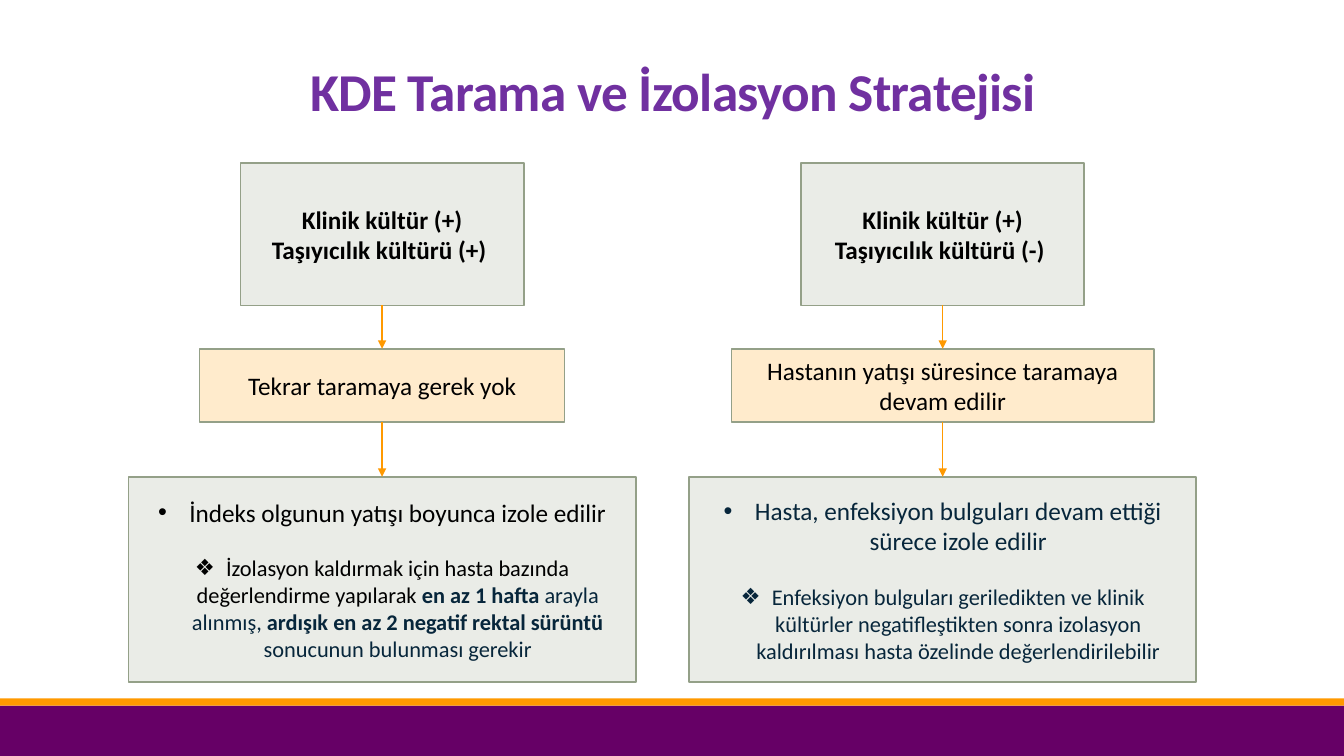
from dataclasses import dataclass

from lxml import etree
from pptx import Presentation
from pptx.dml.color import RGBColor
from pptx.enum import shapes, text
from pptx.oxml import ns
from pptx.util import Inches, Pt


@dataclass(frozen=True)
class Theme:
    font: str = "Calibri"
    purple: str = "660066"
    orange: str = "FF9900"
    title: str = "7030A0"
    sage: str = "EAECE7"
    peach: str = "FFEBCC"
    edge: str = "94A088"
    black: str = "000000"
    navy: str = "07263B"
    head: float = 38
    body: float = 18
    small: float = 16


T = Theme()


def rgb(code):
    return RGBColor.from_string(code)


def style(run, size, color, bold=False):
    font = run.font
    font.name, font.size, font.bold = T.font, Pt(size), bold
    font.color.rgb = rgb(color)


def add_rect(slide, left, top, width, height, fill, edge=None):
    rect = slide.shapes.add_shape(
        shapes.MSO_SHAPE.RECTANGLE,
        Inches(left), Inches(top), Inches(width), Inches(height))
    rect.shadow.inherit = False
    rect.fill.solid()
    rect.fill.fore_color.rgb = rgb(fill)
    if edge:
        rect.line.color.rgb = rgb(edge)
        rect.line.width = Pt(1.25)
    else:
        rect.line.fill.background()
    return rect


def add_box(slide, mid, top, width, height, fill):
    """Add an outlined box centred on the column line."""
    box = add_rect(slide, mid - width / 2, top, width, height, fill, T.edge)
    frame = box.text_frame
    frame.word_wrap = True
    frame.vertical_anchor = text.MSO_ANCHOR.MIDDLE
    return box


def add_label(box, lines, bold=False):
    frame = box.text_frame
    frame.text = "\n".join(lines)
    for para in frame.paragraphs:
        para.alignment = text.PP_ALIGN.CENTER
        style(para.runs[0], T.body, T.black, bold)


def add_bullet(para, mark, size, parts):
    """Fill a paragraph with a bullet and (text, colour, bold) parts."""
    para.alignment = text.PP_ALIGN.CENTER
    props = para._p.get_or_add_pPr()
    props.set("marL", str(Inches(0.31)))
    props.set("indent", str(Inches(-0.31)))
    etree.SubElement(props, ns.qn("a:buFont")).set("typeface", "Arial")
    etree.SubElement(props, ns.qn("a:buChar")).set("char", mark)
    for words, color, bold in parts:
        run = para.add_run()
        run.text = words
        style(run, size, color, bold)


def add_arrow(slide, upper, lower):
    """Join the bottom of one box to the top of the next."""
    arrow = slide.shapes.add_connector(
        shapes.MSO_CONNECTOR.STRAIGHT, 0, 0, 0, 0)
    arrow.begin_connect(upper, 2)
    arrow.end_connect(lower, 0)
    arrow.line.color.rgb = rgb(T.orange)
    arrow.line.width = Pt(1)
    tail = etree.SubElement(arrow.line._get_or_add_ln(), ns.qn("a:tailEnd"))
    tail.set("type", "triangle")
    etree.SubElement(arrow._element.spPr, ns.qn("a:effectLst"))


def add_title(slide, words):
    title = slide.shapes.title
    title.left, title.top = Inches(1.17), Inches(0.63)
    title.width, title.height = Inches(11), Inches(0.73)
    frame = title.text_frame
    frame.text = words
    frame.word_wrap = True
    frame.auto_size = text.MSO_AUTO_SIZE.NONE
    frame.vertical_anchor = text.MSO_ANCHOR.TOP
    para = frame.paragraphs[0]
    para.alignment = text.PP_ALIGN.CENTER
    para.line_spacing = 0.85
    run = para.runs[0]
    style(run, T.head, T.title, True)
    run._r.get_or_add_rPr().set("spc", "-50")


def add_flow(slide, mid, culture, width, action, rule, detail):
    """Build one column: culture result, screening, isolation."""
    result = add_box(slide, mid, 1.62, 2.81, 1.41, T.sage)
    add_label(result, culture, bold=True)
    screen = add_box(slide, mid, 3.46, width, 0.73, T.peach)
    add_label(screen, [action])
    isolate = add_box(slide, mid, 4.73, 5.03, 2.04, T.sage)
    frame = isolate.text_frame
    add_bullet(frame.paragraphs[0], "•", T.body, rule)
    para = frame.add_paragraph()
    add_bullet(para, "❖", T.small, detail)
    para.space_before = Pt(19.5)
    add_arrow(slide, result, screen)
    add_arrow(slide, screen, isolate)


def main():
    deck = Presentation()
    deck.slide_width, deck.slide_height = Inches(13.33), Inches(7.5)
    slide = deck.slides.add_slide(deck.slide_layouts[5])

    # Footer bands
    add_rect(slide, 0, 7, 13.33, 0.5, T.purple)
    add_rect(slide, 0, 6.93, 13.33, 0.07, T.orange)

    add_title(slide, "KDE Tarama ve İzolasyon Stratejisi")

    # Carrier culture positive
    add_flow(
        slide, 3.79,
        ["Klinik kültür (+)", "Taşıyıcılık kültürü (+) "],
        3.62, "Tekrar taramaya gerek yok",
        [("İndeks olgunun yatışı boyunca izole edilir", T.black, False)],
        [("İzolasyon kaldırmak için hasta bazında değerlendirme yapılarak ",
          T.black, False),
         ("en az 1 hafta ", T.navy, True),
         ("arayla alınmış, ", T.navy, False),
         ("ardışık en az 2 negatif rektal sürüntü ", T.navy, True),
         ("sonucunun bulunması gerekir", T.navy, False)])

    # Carrier culture negative
    add_flow(
        slide, 9.35,
        ["Klinik kültür (+)", "Taşıyıcılık kültürü (-) "],
        4.19, "Hastanın yatışı süresince taramaya devam edilir",
        [("Hasta, enfeksiyon bulguları devam ettiği sürece izole edilir",
          T.navy, False)],
        [("Enfeksiyon bulguları geriledikten ve klinik kültürler "
          "negatifleştikten sonra izolasyon kaldırılması hasta özelinde "
          "değerlendirilebilir", T.navy, False)])

    deck.save("out.pptx")


if __name__ == "__main__":
    main()
